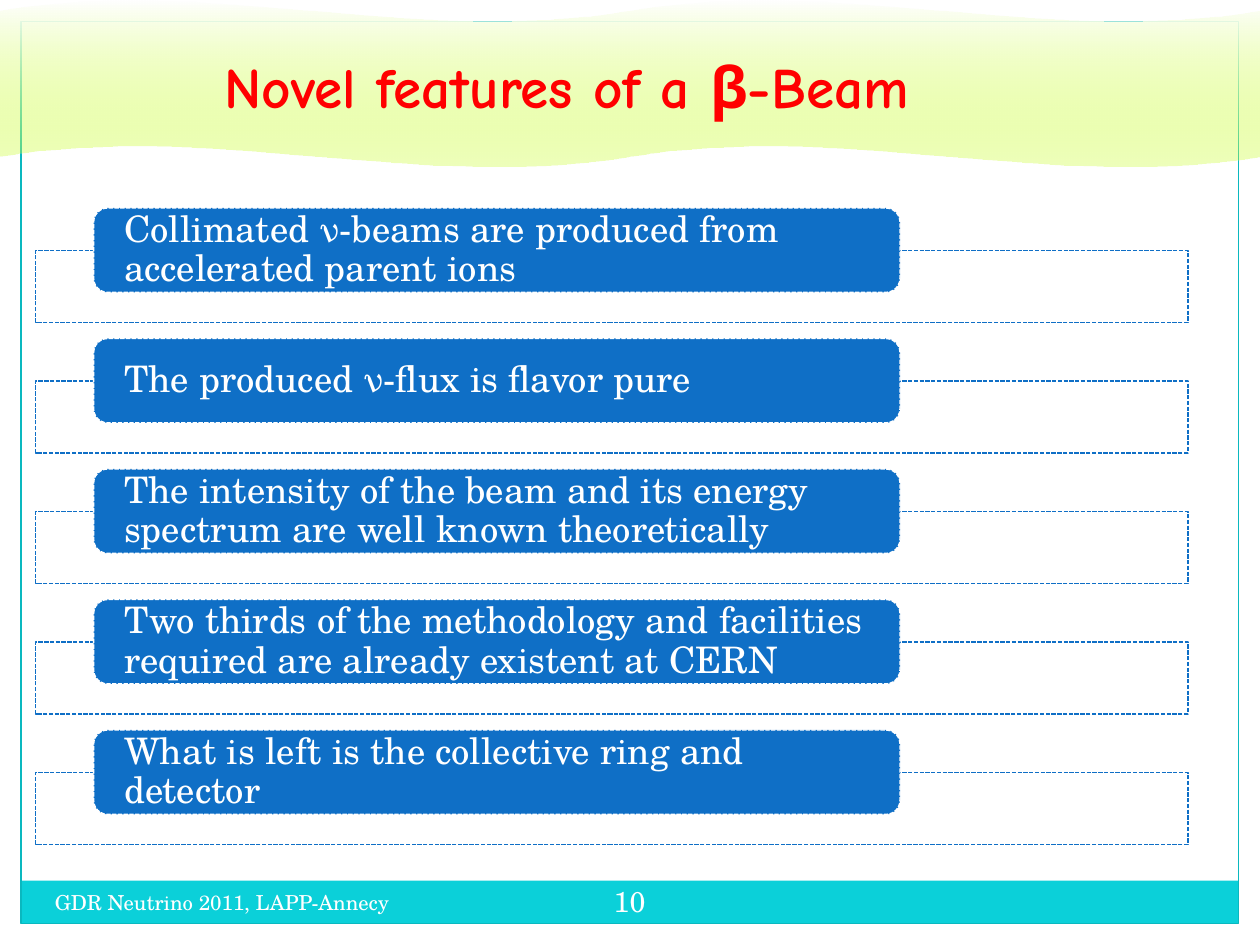
"""Builds the slide on the novel features of a beta beam."""
from dataclasses import dataclass

from lxml.etree import SubElement
from pptx import Presentation
from pptx.dml.color import RGBColor
from pptx.dml.fill import FillFormat
from pptx.enum.dml import MSO_LINE
from pptx.enum.shapes import MSO_SHAPE
from pptx.enum.text import MSO_ANCHOR, MSO_AUTO_SIZE, PP_ALIGN
from pptx.oxml.ns import qn
from pptx.shapes.autoshape import Shape
from pptx.slide import Slide
from pptx.text.text import TextFrame
from pptx.util import Pt

SERIF = "TeX Gyre Schola"
WHITE, BLUE, CYAN, TEAL, LIME, RED = (
    "FFFFFF", "0F6FC6", "0BD0D9", "0AB8BF", "CCFF33", "FF0000")
SLIDE_WIDTH, SLIDE_HEIGHT = 793.75, 595.25
FEATURES = [
    "Collimated ν-beams are produced from accelerated parent ions",
    "The produced ν-flux is flavor pure",
    "The intensity of the beam and its energy spectrum are well known theoretically",
    "Two thirds of the methodology and facilities required are already existent at CERN",
    "What is left is the collective ring and detector",
]
FEATURE_TOP, FEATURE_PITCH = 131, 82.2


@dataclass(frozen=True)
class Box:
    left: float
    top: float
    width: float
    height: float


@dataclass(frozen=True)
class TextStyle:
    size: float
    font: str = SERIF
    color: str = WHITE
    bold: bool = False
    align: PP_ALIGN = PP_ALIGN.LEFT
    anchor: MSO_ANCHOR = MSO_ANCHOR.MIDDLE
    inset_x: float = 8
    inset_y: float = 4
    spacing: float = 1.0


def rgb(color: str) -> RGBColor:
    return RGBColor.from_string(color)


def paint(fill: FillFormat, color: str | None) -> None:
    if color is None:
        fill.background()
    else:
        fill.solid()
        fill.fore_color.rgb = rgb(color)


def add_box(s: Slide, kind: MSO_SHAPE, box: Box, fill: str | None = None,
            line: str | None = None, width: float = 0.75,
            dash: MSO_LINE | None = None) -> Shape:
    sp = s.shapes.add_shape(kind, Pt(box.left), Pt(box.top), Pt(box.width), Pt(box.height))
    sp.shadow.inherit = False
    paint(sp.fill, fill)
    paint(sp.line.fill, line)
    if line:
        sp.line.width = Pt(width)
        sp.line.dash_style = dash
    return sp


def write(tf: TextFrame, text: str, style: TextStyle) -> None:
    tf.word_wrap = True
    tf.auto_size = MSO_AUTO_SIZE.NONE
    tf.vertical_anchor = style.anchor
    tf.margin_left = tf.margin_right = Pt(style.inset_x)
    tf.margin_top = tf.margin_bottom = Pt(style.inset_y)
    p = tf.paragraphs[0]
    p.alignment = style.align
    p.line_spacing = style.spacing
    r = p.add_run()
    r.text = text
    r.font.name = style.font
    r.font.size = Pt(style.size)
    r.font.bold = style.bold
    r.font.color.rgb = rgb(style.color)


def add_label(s: Slide, box: Box, text: str, style: TextStyle) -> None:
    sp = s.shapes.add_textbox(Pt(box.left), Pt(box.top), Pt(box.width), Pt(box.height))
    write(sp.text_frame, text, style)


def add_wave(s: Slide, box: Box) -> None:
    sp = add_box(s, MSO_SHAPE.DOUBLE_WAVE, box)
    sp.adjustments[0] = 0.065
    sp.adjustments[1] = 0
    sp.fill.gradient()
    sp.fill.gradient_angle = 270
    for stop, color, position in zip(sp.fill.gradient_stops, (WHITE, LIME), (0, 1)):
        stop.color.rgb = rgb(color)
        stop.position = position
    lime = sp.element.spPr.findall(".//" + qn("a:srgbClr"))[-1]
    SubElement(lime, qn("a:alpha")).set("val", "33000")


def add_title(s: Slide, box: Box, text: str, style: TextStyle) -> None:
    sp = s.shapes.title
    sp.left, sp.top, sp.width, sp.height = (
        Pt(box.left), Pt(box.top), Pt(box.width), Pt(box.height))
    write(sp.text_frame, text, style)
    sp.element.getparent().append(sp.element)


def add_feature(s: Slide, top: float, text: str, style: TextStyle) -> None:
    frame = add_box(s, MSO_SHAPE.RECTANGLE, Box(22.5, top + 26.8, 725.8, 45.4),
                    WHITE, BLUE, 0.9, MSO_LINE.SQUARE_DOT)
    color = frame.element.spPr.find(qn("a:solidFill")).find(qn("a:srgbClr"))
    SubElement(color, qn("a:alpha")).set("val", "90000")
    pill = add_box(s, MSO_SHAPE.ROUNDED_RECTANGLE, Box(59, top, 508, 53.2),
                   BLUE, WHITE, 0.9, MSO_LINE.SQUARE_DOT)
    write(pill.text_frame, text, style)


def main() -> None:
    prs = Presentation()
    prs.slide_width, prs.slide_height = Pt(SLIDE_WIDTH), Pt(SLIDE_HEIGHT)
    s = prs.slides.add_slide(prs.slide_layouts[5])

    add_box(s, MSO_SHAPE.RECTANGLE, Box(13.2, 554.8, 766.8, 26.6), CYAN)
    add_box(s, MSO_SHAPE.RECTANGLE, Box(13.2, 13.5, 766.8, 568.1), line=TEAL)
    add_wave(s, Box(0, 0, SLIDE_WIDTH, 105))
    add_label(s, Box(370.3, 548.6, 52.6, 38.2), "10",
              TextStyle(18, align=PP_ALIGN.CENTER, inset_x=4.3, inset_y=4.3))
    add_title(s, Box(0, 0, 714.2, 79.5), "Novel features of a β-Beam",
              TextStyle(36, "Comic Neue", RED, True, PP_ALIGN.CENTER, MSO_ANCHOR.BOTTOM))
    feature_style = TextStyle(23, inset_x=16.6, inset_y=0, spacing=0.9)
    for i, feature in enumerate(FEATURES):
        add_feature(s, FEATURE_TOP + i * FEATURE_PITCH, feature, feature_style)
    add_label(s, Box(26.6, 556.6, 311, 31.7), "GDR Neutrino 2011, LAPP-Annecy",
              TextStyle(13, anchor=MSO_ANCHOR.TOP))

    prs.save("out.pptx")


if __name__ == "__main__":
    main()
